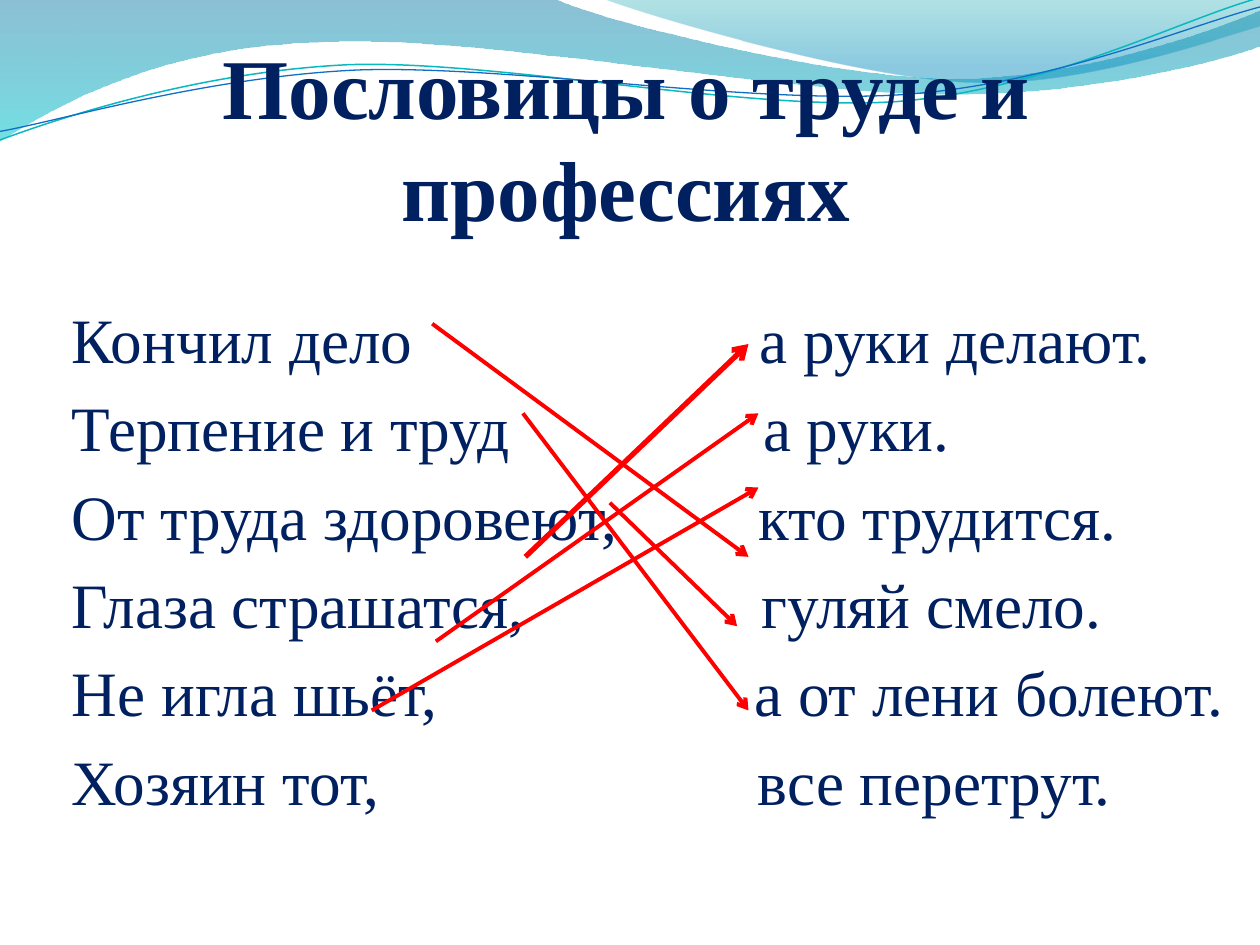
from lxml.etree import SubElement
from pptx import Presentation
from pptx.dml.color import RGBColor
from pptx.enum.shapes import MSO_CONNECTOR
from pptx.enum.text import PP_ALIGN
from pptx.oxml import parse_xml
from pptx.oxml.ns import nsdecls, qn
from pptx.util import Pt

COLORS = {"navy": "002060", "red": "FF0000", "teal": "0AB8BF", "blue": "0F6FC6"}
TITLE = "Пословицы о труде и профессиях"
# beginning, ending, tab stop of the ending
PROVERBS = [
    ("Кончил дело", "а руки делают.", 393),
    ("Терпение и труд", "а руки.", 395),
    ("От труда здоровеют,", "кто трудится.", 392.5),
    ("Глаза страшатся,", "гуляй смело.", 394),
    ("Не игла шьёт,", "а от лени болеют.", 390),
    ("Хозяин тот,", "все перетрут.", 392),
]
# Waves: a start point, then points (2 numbers) or Bezier curves (6 numbers).
# Gradient stops: position %, colour, opacity %.
FILLED_WAVES = [
    ([(0, 0), (317, -0.7), (343, 12, 478, 45, 546, 45), (614, 45, 690, 19, 720, 6),
      (721, 26), (708, 32, 626, 55, 537, 54), (448, 54, 275, 20, 185, 24),
      (93, 26, 33, 60, -0.7, 81)],
     [(0, "0074A1", 45), (100, "00C6CF", 55)]),
    ([(345, -0.7), (366, 8, 491, 45, 554, 47), (616, 50, 692, 23, 720, 15), (720, 0)],
     [(0, "00A1A9", 30), (80, "008BBF", 45)]),
]
LINE_WAVES = [
    ([(-1.4, 63), (34.2, 51.7, 114.3, 29.4, 199.4, 29.4),
      (284.4, 30.5, 425.8, 67.2, 512, 65.2),
      (598.2, 62.3, 676.1, 25.9, 720.6, 15.9)], "teal", 0.85),
    ([(-1.1, 58.1), (33.2, 53.7, 118.2, 32.6, 204.3, 32.7),
      (290.3, 33.7, 429.1, 63.3, 515.3, 61.4),
      (601.5, 59.4, 678.9, 30, 721.4, 21)], "blue", 0.75),
]
WAVE_TILT = 357.3
# x1, y1, x2, y2, width
ARROWS = [
    (247, 185, 427.7, 318.2, 2.25),
    (298.8, 236.2, 427.7, 406, 2.25),
    (348.5, 287.3, 421.2, 357.8, 2.25),
    (300.2, 318.2, 427.7, 196.6, 3),
    (249.1, 366.5, 433.4, 236.2, 2.25),
    (212.4, 406, 433.4, 278.6, 2.25),
]


def rgb(name):
    return RGBColor.from_string(COLORS[name])


def add_wave(s, steps, close):
    """Build the outline through its end points, then bend its curved segments."""
    ends = [(Pt(step[-2]), Pt(step[-1])) for step in steps]
    fb = s.shapes.build_freeform(*ends[0])
    fb.add_line_segments(ends[1:], close=close)
    sp = fb.convert_to_shape()
    sp.shadow.inherit = False
    segments = list(sp.element.iter(qn("a:lnTo")))
    for step, segment in zip(steps[1:], segments):
        if len(step) == 6:
            segment.tag = qn("a:cubicBezTo")
            for i in (2, 0):
                pt = SubElement(segment, qn("a:pt"))
                pt.set("x", str(Pt(step[i]) - sp.left))
                pt.set("y", str(Pt(step[i + 1]) - sp.top))
                segment.insert(0, pt)
    return sp


def set_gradient(sp, stops):
    gs = "".join(f'<a:gs pos="{pos * 1000}"><a:srgbClr val="{color}">'
                 f'<a:alpha val="{alpha * 1000}"/></a:srgbClr></a:gs>'
                 for pos, color, alpha in stops)
    grad = parse_xml(f'<a:gradFill {nsdecls("a")}><a:gsLst>{gs}</a:gsLst>'
                     '<a:lin ang="5400000" scaled="0"/></a:gradFill>')
    sp.element.spPr.find(qn("a:custGeom")).addnext(grad)
    sp.line.fill.background()


def add_text(s, box, lines, fmt, size, bold=False):
    """Add a text box; fmt holds paragraph attributes. Return its frame."""
    tf = s.shapes.add_textbox(*map(Pt, box)).text_frame
    tf.word_wrap = True
    font = {"name": "Times New Roman", "size": Pt(size), "bold": bold}
    for i, line in enumerate(lines):
        p = tf.paragraphs[0] if i == 0 else tf.add_paragraph()
        for key, value in fmt.items():
            setattr(p, key, value)
        r = p.add_run()
        r.text = line
        for key, value in font.items():
            setattr(r.font, key, value)
        r.font.color.rgb = rgb("navy")
    return tf


def add_arrow(s, x1, y1, x2, y2, width):
    c = s.shapes.add_connector(MSO_CONNECTOR.STRAIGHT, *map(Pt, (x1, y1, x2, y2)))
    c.line.color.rgb = rgb("red")
    c.line.width = Pt(width)
    ln = c.element.spPr.find(qn("a:ln"))
    SubElement(ln, qn("a:tailEnd"), type="arrow")
    SubElement(c.element.spPr, qn("a:effectLst"))


prs = Presentation()
prs.slide_width, prs.slide_height = Pt(720), Pt(540)
s = prs.slides.add_slide(prs.slide_layouts[6])

for steps, stops in FILLED_WAVES:
    set_gradient(add_wave(s, steps, True), stops)
for steps, color, width in LINE_WAVES:
    sp = add_wave(s, steps, False)
    sp.rotation = WAVE_TILT
    sp.fill.background()
    sp.line.color.rgb = rgb(color)
    sp.line.width = Pt(width)

tf = add_text(s, (31.2, 0, 653, 191), [TITLE],
              {"alignment": PP_ALIGN.CENTER, "line_spacing": Pt(58.5)}, 48.6, True)
tf.margin_left = tf.margin_right = 0
tf.margin_top = Pt(19.3)

tf = add_text(s, (34, 164.3, 686, 282), [f"{a}\t{b}" for a, b, _ in PROVERBS],
              {"line_spacing": Pt(50.5)}, 36.1)
tf.margin_top = tf.margin_right = 0
for p, (_, _, tab) in zip(tf.paragraphs, PROVERBS):
    tabs = SubElement(p._p.get_or_add_pPr(), qn("a:tabLst"))
    SubElement(tabs, qn("a:tab"), pos=str(Pt(tab)), algn="l")

for arrow in ARROWS:
    add_arrow(s, *arrow)

prs.save("out.pptx")
